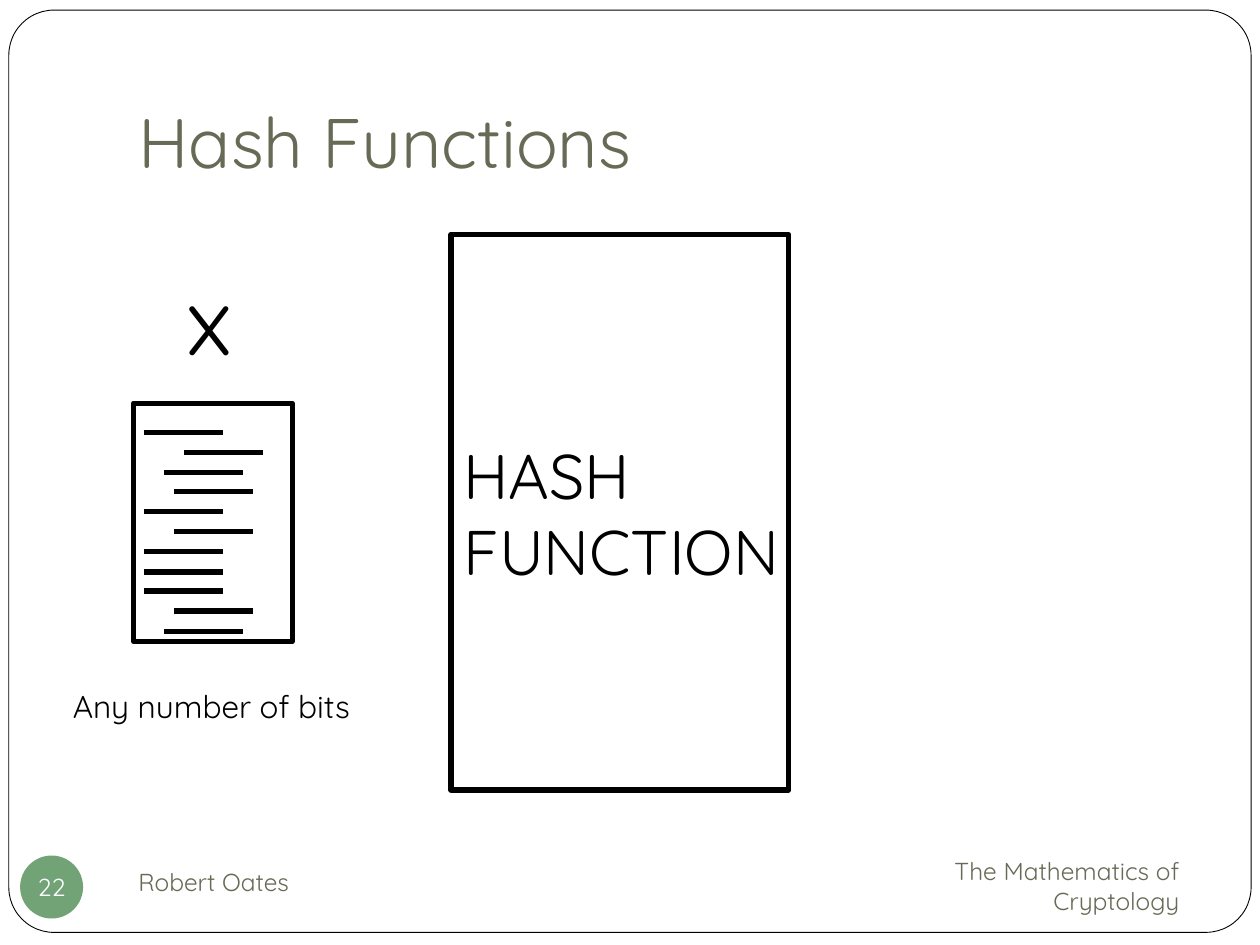
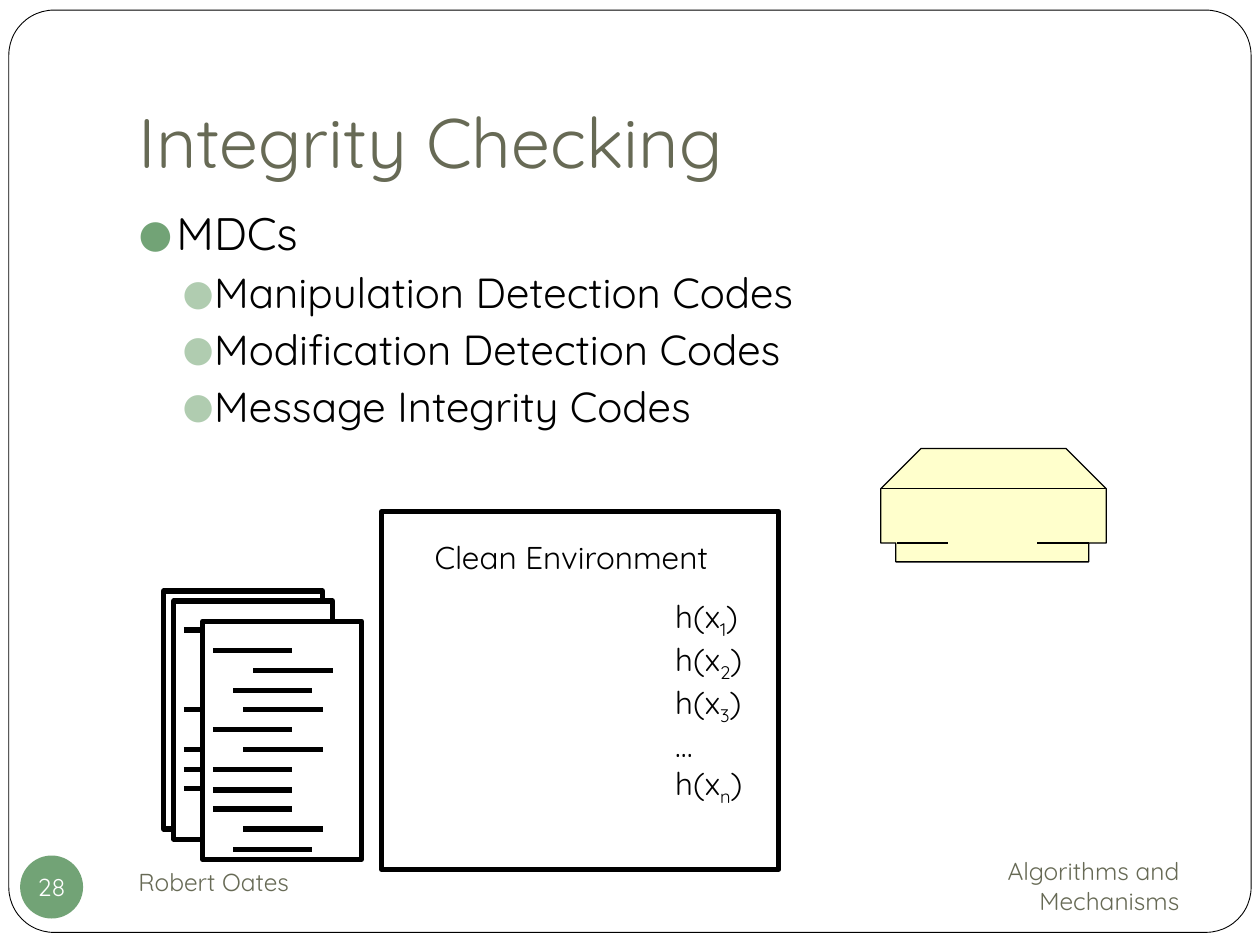
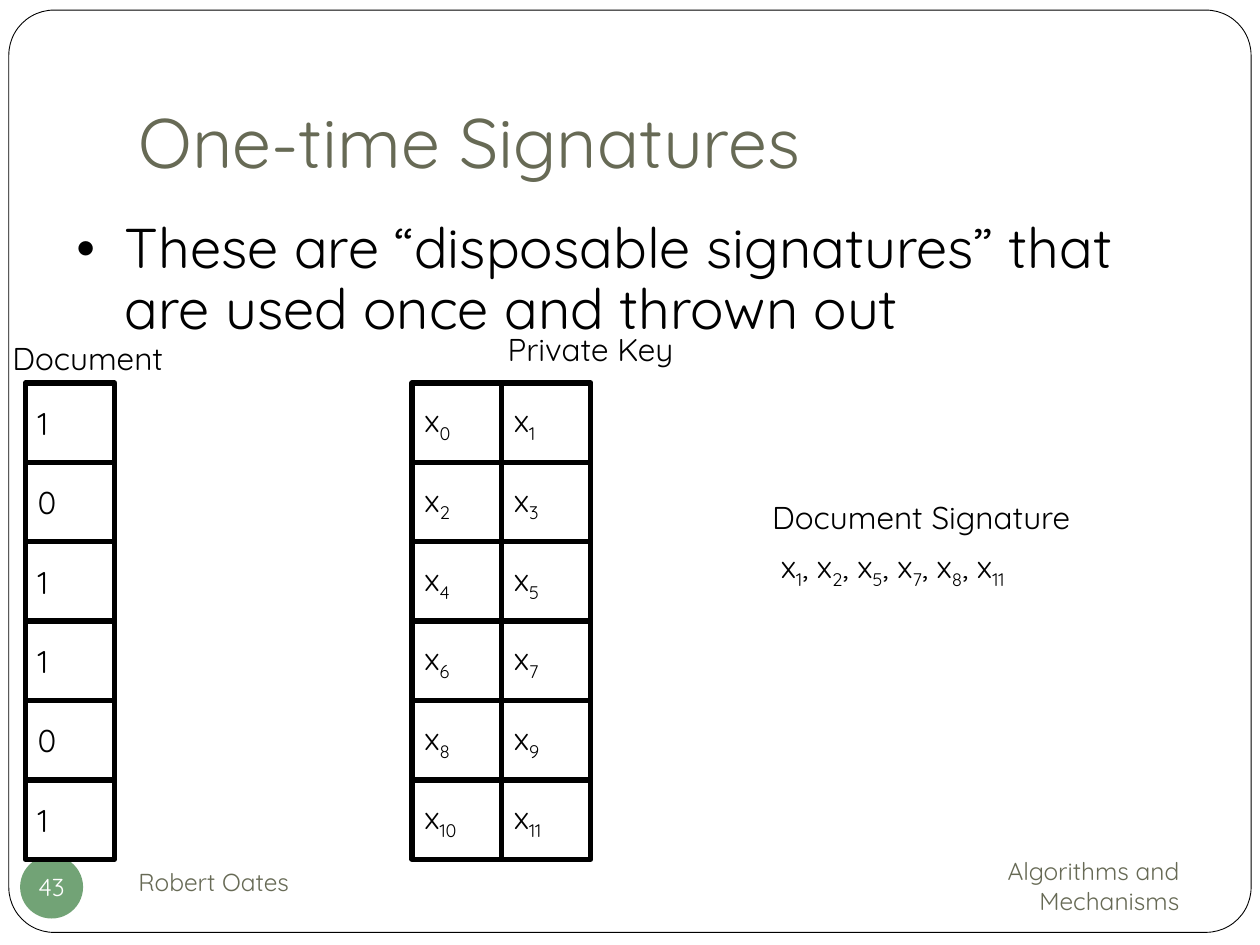
from lxml.etree import SubElement
from pptx import Presentation
from pptx.dml.color import RGBColor as Rgb
from pptx.enum.shapes import MSO_CONNECTOR as Link, MSO_SHAPE as Kind
from pptx.enum.text import MSO_ANCHOR as Anchor, MSO_AUTO_SIZE as Fit, PP_ALIGN as Align
from pptx.oxml.ns import qn
from pptx.util import Pt

PX = 9144  # 100 px to the inch
FONT = "Quicksand"
HUES = {"ink": "000000", "paper": "FFFFFF", "olive": "676A55",
        "green": "72A376", "mint": "B0CCB0", "cream": "FFFFCC"}
HUES = {name: Rgb.from_string(code) for name, code in HUES.items()}

# Text frame formats
LABEL = {"word_wrap": False, "auto_size": Fit.SHAPE_TO_FIT_TEXT}
CELL = {"word_wrap": False, "vertical_anchor": Anchor.MIDDLE}
FOOT = {"word_wrap": True, "vertical_anchor": Anchor.MIDDLE}
BADGE = CELL | {f"margin_{side}": 0 for side in ("left", "top", "right", "bottom")}
HEAD = {"word_wrap": True, "auto_size": Fit.NONE, "vertical_anchor": Anchor.BOTTOM,
        "margin_bottom": 10 * PX}
LIST = {"word_wrap": True, "auto_size": Fit.NONE, "vertical_anchor": Anchor.TOP}


def place(slide, kind, box, fill="paper", width=3):
    """Add a preset shape, or a text box when kind is None."""
    box = [n * PX for n in box]
    if kind is None:
        return slide.shapes.add_textbox(*box)
    shape = slide.shapes.add_shape(kind, *box)
    shape.shadow.inherit = False
    shape.fill.solid()
    shape.fill.fore_color.rgb = HUES[fill]
    if width:
        shape.line.color.rgb = HUES["ink"]
        shape.line.width = Pt(width)
    else:
        shape.line.fill.background()
    return shape


def write(shape, text, form, size=18, hue="ink", align=Align.LEFT):
    """Fill a shape with lines of text; parts between underscores are subscripts."""
    frame = shape.text_frame
    for key, val in form.items():
        setattr(frame, key, val)
    for i, line in enumerate(text.split("\n")):
        para = frame.add_paragraph() if i else frame.paragraphs[0]
        para.alignment = align
        for j, part in enumerate(line.split("_")):
            if not part:
                continue
            run = para.add_run()
            run.text = part
            run.font.name, run.font.size = FONT, Pt(size)
            run.font.color.rgb = HUES[hue]
            if j % 2:
                run.font._element.set("baseline", "-25000") if hasattr(
                    run.font, "_element") else run._r.get_or_add_rPr().set("baseline", "-25000")


deck = Presentation()
deck.slide_width, deck.slide_height = 1000 * PX, 750 * PX

# Titles and footers
slides = []
for layout, title, topic, num in [
        (5, "Hash Functions", "The Mathematics of Cryptology", "22"),
        (1, "Integrity Checking", "Algorithms and Mechanisms", "28"),
        (1, "One-time Signatures", "Algorithms and Mechanisms", "43")]:
    slide = deck.slides.add_slide(deck.slide_layouts[layout])
    head = slide.shapes.title
    head.left, head.top, head.width, head.height = [n * PX for n in (100, 30, 850, 125)]
    write(head, title, HEAD, 40, "olive")
    write(place(slide, None, (675, 677, 271, 52)), topic, FOOT, 14, "olive", Align.RIGHT)
    write(place(slide, None, (100, 675, 433, 50)), "Robert Oates", FOOT, 14, "olive")
    badge = place(slide, Kind.OVAL, (16, 679, 50, 50), "green", 0)
    write(badge, num, BADGE, 14, "paper", Align.CENTER)
    slides.append(slide)
hash_s, check, once = slides

# Rounded frame, moved to the master
edge = place(hash_s, Kind.ROUNDED_RECTANGLE, (7, 8, 986, 732), width=0.5)
edge.adjustments[0] = 0.049
deck.slide_master.shapes.element.insert(2, edge.element)

# Bulleted lists: text, level, size, indent, hang, space before, line spacing, bullet, colour, percent
sub = (1, 24, 60, 25, 3.7, 1, "●", "mint", 85)
lists = [
    (check, (100, 158, 850, 500), [
        ("MDCs", 0, 26, 30, 30, 5.8, 1, "●", "green", 85),
        ("Manipulation Detection Codes", *sub),
        ("Modification Detection Codes", *sub),
        ("Message Integrity Codes", *sub)]),
    (once, (51, 170, 900, 495), [
        ("These are “disposable signatures” that are used once and thrown out",
         0, 32, 38, 38, 6.4, 0.9, "•", "ink", 100)])]
for slide, box, items in lists:
    body = slide.placeholders[1]
    body.left, body.top, body.width, body.height = [n * PX for n in box]
    write(body, "\n".join(item[0] for item in items), LIST)
    for para, item in zip(body.text_frame.paragraphs, items):
        _, level, size, left, hang, before, pitch, mark, hue, pct = item
        para.level, para.space_before, para.line_spacing = level, Pt(before), pitch
        para.runs[0].font.size = Pt(size)
        props = para._p.get_or_add_pPr()
        props.set("marL", str(left * PX))
        props.set("indent", str(-hang * PX))
        tint = SubElement(props, qn("a:buClr"))
        SubElement(tint, qn("a:srgbClr"), val=str(HUES[hue]))
        SubElement(props, qn("a:buSzPct"), val=str(pct * 1000))
        SubElement(props, qn("a:buFont"), typeface=FONT)
        SubElement(props, qn("a:buChar"), char=mark)

# Documents: a page with short lines, of which the rear pages keep a few
dents = (8, 40, 24, 32, 8, 32, 8, 8, 8, 32, 24)
for slide, left, top, rows in [
        (hash_s, 106, 320, range(11)),
        (check, 130, 469, (0, 4, 6, 7, 8)),
        (check, 138, 477, (0, 2, 4, 6, 7, 8, 10)),
        (check, 161, 493, range(11))]:
    place(slide, Kind.RECTANGLE, (left, top, 126, 189))
    for row in rows:
        x, y = left + dents[row], top + 23 + round(15.8 * row)
        rule = slide.shapes.add_connector(
            Link.STRAIGHT, x * PX, y * PX, (x + 63) * PX, y * PX)
        rule.line.color.rgb, rule.line.width = HUES["ink"], Pt(3)
        SubElement(rule.element.spPr, qn("a:effectLst"))

# Large boxes
func = place(hash_s, Kind.RECTANGLE, (358, 186, 268, 441))
write(func, "HASH\nFUNCTION", CELL, 36)
place(check, Kind.RECTANGLE, (303, 406, 315, 284))

# Disk drive
pen = check.shapes.build_freeform(878, 388, scale=PX)
pen.add_line_segments([(846, 356), (731, 356), (699, 388), (699, 431), (711, 431),
                       (711, 446), (864, 446), (864, 431), (878, 431)])
for x1, x2, y in [(712, 752, 431), (864, 823, 431), (699, 878, 388)]:
    pen.move_to(x1, y)
    pen.add_line_segments([(x2, y)], close=False)
drive = pen.convert_to_shape()
drive.shadow.inherit = False
drive.fill.solid()
drive.fill.fore_color.rgb = HUES["cream"]
drive.line.color.rgb, drive.line.width = HUES["ink"], Pt(0.75)

# Document bits and private key
for row, bit in enumerate("101101"):
    cells = [(20, bit), (327, f"x_{2 * row}_"), (398, f"x_{2 * row + 1}_")]
    for x, text in cells:
        write(place(once, Kind.RECTANGLE, (x, 304 + 63 * row, 71, 63)), text, CELL)

# Labels
for slide, box, text, size in [
        (hash_s, (138, 202, 66, 100), "x", 54),
        (hash_s, (48, 540, 253, 40), "Any number of bits", 18),
        (check, (335, 422, 248, 40), "Clean Environment", 18),
        (check, (526, 469, 78, 160), "h(x_1_)\nh(x_2_)\nh(x_3_)\n…\nh(x_n_)", 18),
        (once, (0, 264, 144, 40), "Document", 18),
        (once, (393, 257, 153, 40), "Private Key", 18),
        (once, (610, 429, 266, 40), "x_1_, x_2_, x_5_, x_7_, x_8_, x_11_", 18),
        (once, (603, 390, 267, 40), "Document Signature", 18)]:
    write(place(slide, None, box), text, LABEL, size)

deck.save("out.pptx")
